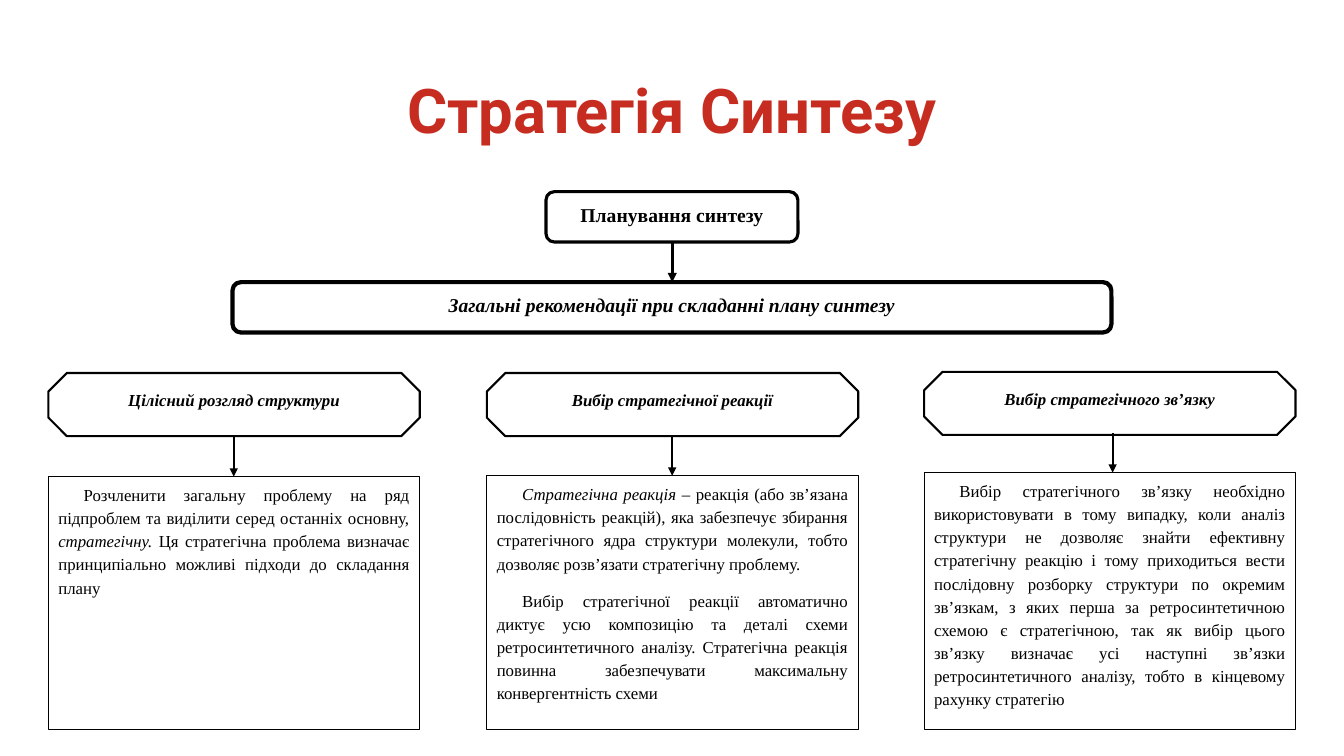
from lxml import etree
from pptx import Presentation
from pptx.dml.color import RGBColor
from pptx.enum.shapes import MSO_CONNECTOR, MSO_SHAPE
from pptx.enum.text import MSO_ANCHOR, PP_ALIGN
from pptx.oxml.ns import qn
from pptx.util import Cm, Pt

COLORS = {"title": "C72C21", "ink": "000000", "paper": "FFFFFF"}
COLORS = {name: RGBColor.from_string(value) for name, value in COLORS.items()}
SERIF = "Times New Roman"

prs = Presentation()
prs.slide_width, prs.slide_height = Cm(33.87), Cm(19.05)
s = prs.slides.add_slide(prs.slide_layouts[6])


def add_box(kind, box, line, paragraphs, size, bold=False, align=PP_ALIGN.CENTER, indent=0, adj=None):
    """Outlined box; each paragraph is a list of (text, italic) runs."""
    sp = s.shapes.add_shape(kind, *[Cm(v) for v in box])
    sp.shadow.inherit = False
    if adj is not None:
        sp.adjustments[0] = adj
    sp.fill.solid()
    sp.fill.fore_color.rgb = COLORS["paper"]
    sp.line.color.rgb = COLORS["ink"]
    sp.line.width = Pt(line)
    tf = sp.text_frame
    tf.word_wrap = True
    tf.vertical_anchor = MSO_ANCHOR.TOP
    for i, runs in enumerate(paragraphs):
        p = tf.add_paragraph() if i else tf.paragraphs[0]
        p.alignment = align
        p.line_spacing = 1.15
        p.space_after = Pt(10)
        if indent:
            p._p.get_or_add_pPr().set("indent", str(Cm(indent)))
        p.font.name, p.font.size, p.font.bold = SERIF, Pt(size), bold
        p.font.color.rgb = COLORS["ink"]
        for text, italic in runs:
            r = p.add_run()
            r.text = text
            r.font.italic = italic


def add_arrow(x, top, bottom, width):
    """Vertical arrow pointing down."""
    c = s.shapes.add_connector(MSO_CONNECTOR.STRAIGHT, Cm(x), Cm(top), Cm(x), Cm(bottom))
    c.line.color.rgb = COLORS["ink"]
    c.line.width = Pt(width)
    etree.SubElement(c.line._get_or_add_ln(), qn("a:tailEnd"), type="triangle")
    etree.SubElement(c._element.spPr, qn("a:effectLst"))


# Title
tf = s.shapes.add_textbox(Cm(2.33), Cm(1.01), Cm(29.21), Cm(3.68)).text_frame
tf.word_wrap = True
tf.vertical_anchor = MSO_ANCHOR.MIDDLE
p = tf.paragraphs[0]
p.text = "Стратегія Синтезу"
p.alignment = PP_ALIGN.CENTER
p.line_spacing = 0.9
p.font.name, p.font.size, p.font.bold = "Roboto", Pt(44), True
p.font.color.rgb = COLORS["title"]

# Planning and general recommendations
add_box(MSO_SHAPE.ROUNDED_RECTANGLE, (13.76, 4.83, 6.35, 1.27), 2.25,
        [[("Планування синтезу", False)]], 14, bold=True, adj=0.167)
add_box(MSO_SHAPE.ROUNDED_RECTANGLE, (5.86, 7.11, 22.15, 1.27), 3,
        [[("Загальні рекомендації при складанні плану синтезу", True)]], 14, bold=True, adj=0.167)
add_arrow(16.94, 6.1, 7.11, 2.25)

# Three columns: left, heading top, arrow x, arrow top, text top, heading, paragraphs
columns = [
    (1.22, 9.4, 5.89, 10.97, 12.01, "Цілісний розгляд структури", [
        [("Розчленити загальну проблему на ряд підпроблем та виділити серед останніх основну, ", False),
         ("стратегічну.", True),
         (" Ця стратегічна проблема визначає принципіально можливі підходи до складання плану", False)]]),
    (12.27, 9.4, 16.94, 10.97, 11.99, "Вибір стратегічної реакції", [
        [("Стратегічна реакція", True),
         (" – реакція (або зв’язана послідовність реакцій), яка забезпечує збирання "
          "стратегічного ядра структури молекули, тобто дозволяє розв’язати стратегічну проблему.", False)],
        [("Вибір стратегічної реакції автоматично диктує усю композицію та деталі схеми "
          "ретросинтетичного аналізу. Стратегічна реакція повинна забезпечувати максимальну "
          "конвергентність схеми", False)]]),
    (23.29, 9.37, 28.04, 10.92, 11.91, "Вибір стратегічного зв’язку", [
        [("Вибір стратегічного зв’язку необхідно використовувати в тому випадку, коли аналіз "
          "структури не дозволяє знайти ефективну стратегічну реакцію і тому приходиться вести "
          "послідовну розборку структури по окремим зв’язкам, з яких перша за ретросинтетичною "
          "схемою є стратегічною, так як вибір цього зв’язку визначає усі наступні зв’язки "
          "ретросинтетичного аналізу, тобто в кінцевому рахунку стратегію", False)]]),
]
COLUMN_W, HEADING_H, BOTTOM = 9.36, 1.59, 18.39
for left, head_top, arrow_x, arrow_top, text_top, heading, paragraphs in columns:
    add_box(MSO_SHAPE.OCTAGON, (left, head_top, COLUMN_W, HEADING_H), 1.5,
            [[(heading, True)]], 12, bold=True, adj=0.293)
    add_box(MSO_SHAPE.RECTANGLE, (left, text_top, COLUMN_W, BOTTOM - text_top), 0.75,
            paragraphs, 12, align=PP_ALIGN.JUSTIFY, indent=0.64)
    add_arrow(arrow_x, arrow_top, text_top, 1.5)

prs.save("out.pptx")
